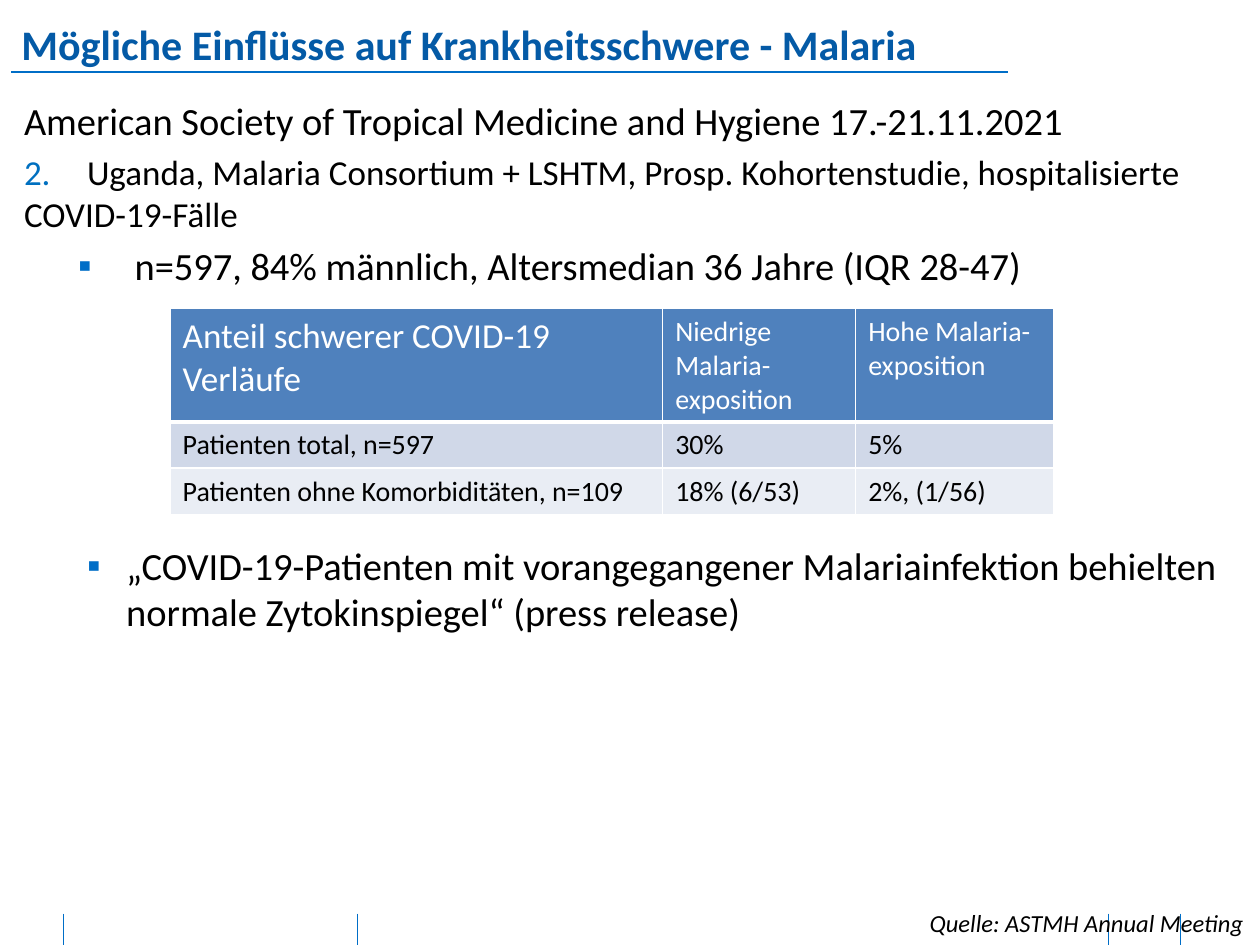
"""Build the slide on malaria exposition and COVID-19 severity."""
from dataclasses import dataclass

from lxml import etree
from pptx import Presentation, util as u
from pptx.dml.color import RGBColor
from pptx.enum import shapes, text
from pptx.oxml.ns import qn


@dataclass(frozen=True)
class Theme:
    font: str = "Calibri"
    title: str = "045AA6"
    rule: str = "006EC7"
    number: str = "0070C0"
    ink: str = "000000"
    white: str = "FFFFFF"
    head: str = "4F81BD"
    bands: tuple = ("D0D8E8", "E9EDF4")
    title_pt: int = 24
    body_pt: int = 22
    item_pt: int = 20
    cell_pt: int = 16
    source_pt: int = 14
    gap_pt: float = 4.3


T = Theme()
TITLE = "Mögliche Einflüsse auf Krankheitsschwere - Malaria"
EVENT = "American Society of Tropical Medicine and Hygiene 17.-21.11.2021"
STUDY = ("2.", "\tUganda, Malaria Consortium + LSHTM, Prosp. Kohortenstudie, "
               "hospitalisierte COVID-19-Fälle")
BULLETS = [
    ("n=597, 84% männlich, Altersmedian 36 Jahre (IQR 28-47)", 2.23, -1.14, T.gap_pt),
    ("„COVID-19-Patienten mit vorangegangener Malariainfektion behielten "
     "normale Zytokinspiegel“ (press release)", 2.06, -0.79, 145),
]
TABLE = [
    ("Anteil schwerer COVID-19 Verläufe", "Niedrige Malaria-exposition",
     "Hohe Malaria-exposition"),
    ("Patienten total, n=597", "30%", "5%"),
    ("Patienten ohne Komorbiditäten, n=109", "18% (6/53)", "2%, (1/56)"),
]
COL_WIDTHS = (9.93, 3.89, 3.99)
ROW_HEIGHTS = (2.26, 0.93, 0.93)
SOURCE = "Quelle: ASTMH Annual Meeting"
FOOTER_TICKS = (1.27, 7.21, 22.35, 23.8)


def rgb(value):
    return RGBColor.from_string(value)


def style(p, size, color=T.ink, bold=False, italic=False):
    for r in p.runs:
        f = r.font
        f.name, f.size, f.bold, f.italic = T.font, u.Pt(size), bold, italic
        f.color.rgb = rgb(color)


def place(sp, *box):
    sp.left, sp.top, sp.width, sp.height = map(u.Cm, box)


def add_line(s, x1, y1, x2, y2, width):
    cx = s.shapes.add_connector(shapes.MSO_CONNECTOR.STRAIGHT, *map(u.Cm, (x1, y1, x2, y2)))
    cx.line.color.rgb, cx.line.width = rgb(T.rule), u.Pt(width)
    etree.SubElement(cx.element.spPr, qn("a:effectLst"))


def sub(parent, tag, **attrs):
    return etree.SubElement(parent, qn(tag), attrs)


def set_list(p, left=0, indent=0, char=None, tab=None):
    pr = p._p.get_or_add_pPr()
    pr.set("marL", str(u.Cm(left)))
    pr.set("indent", str(u.Cm(indent)))
    if char:
        sub(sub(pr, "a:buClr"), "a:srgbClr", val=T.rule)
        sub(pr, "a:buFont", typeface="Arial")
        sub(pr, "a:buChar", char=char)
    else:
        sub(pr, "a:buNone")
    if tab:
        sub(sub(pr, "a:tabLst"), "a:tab", pos=str(u.Cm(tab)), algn="l")


def add_title(s):
    sp = s.shapes.title
    place(sp, 0.43, 0.38, 22.48, 1.02)
    tf = sp.text_frame
    tf.text = TITLE
    tf.margin_left = tf.margin_right = tf.margin_top = tf.margin_bottom = 0
    p = tf.paragraphs[0]
    p.alignment = text.PP_ALIGN.LEFT
    style(p, T.title_pt, T.title, bold=True)


def add_body(s):
    sp = s.placeholders[1]
    place(sp, 0.23, 1.83, 25.48, 17.22)
    tf = sp.text_frame
    tf.auto_size = text.MSO_AUTO_SIZE.NONE
    p = tf.paragraphs[0]
    p.text = EVENT
    p.space_before = u.Pt(0)
    set_list(p)
    style(p, T.body_pt)

    p = tf.add_paragraph()
    p.space_before = u.Pt(T.gap_pt)
    set_list(p, tab=1.27)
    for part in STUDY:
        p.add_run().text = part
    style(p, T.item_pt)
    p.runs[0].font.color.rgb = rgb(T.number)

    for words, left, indent, before in BULLETS:
        p = tf.add_paragraph()
        p.text, p.level = words, 1
        p.space_before = u.Pt(before)
        set_list(p, left, indent, "▪")
        style(p, T.body_pt)


def set_borders(cell, bottom):
    pr = cell._tc.get_or_add_tcPr()
    for side, width in (("L", 1), ("R", 1), ("T", 1), ("B", bottom)):
        ln = sub(pr, f"a:ln{side}", w=str(u.Pt(width)))
        sub(sub(ln, "a:solidFill"), "a:srgbClr", val=T.white)


def add_table(s):
    box = map(u.Cm, (3.43, 6.22, sum(COL_WIDTHS), sum(ROW_HEIGHTS)))
    tbl = s.shapes.add_table(len(TABLE), len(COL_WIDTHS), *box).table
    for col, width in zip(tbl.columns, COL_WIDTHS):
        col.width = u.Cm(width)
    for i, (row, height) in enumerate(zip(TABLE, ROW_HEIGHTS)):
        tbl.rows[i].height = u.Cm(height)
        for j, words in enumerate(row):
            cell = tbl.cell(i, j)
            cell.text = words
            set_borders(cell, 1 if i else 3)
            cell.fill.solid()
            cell.fill.fore_color.rgb = rgb(T.bands[(i - 1) % 2] if i else T.head)
            style(cell.text_frame.paragraphs[0],
                  T.cell_pt if i or j else T.item_pt, T.ink if i else T.white)


def add_source(s):
    tf = s.shapes.add_textbox(*map(u.Cm, (17.93, 18.19, 7.39, 0.86))).text_frame
    tf.word_wrap = True
    tf.text = SOURCE
    p = tf.paragraphs[0]
    p.alignment = text.PP_ALIGN.RIGHT
    style(p, T.source_pt, italic=True)


def main():
    prs = Presentation()
    prs.slide_width, prs.slide_height = u.Cm(25.4), u.Cm(19.05)
    s = prs.slides.add_slide(prs.slide_layouts[1])
    for x in FOOTER_TICKS:
        add_line(s, x, 18.42, x, 19.05, 0.5)
    add_title(s)
    add_line(s, 0.23, 1.45, 20.32, 1.45, 1.5)
    add_source(s)
    add_body(s)
    add_table(s)
    prs.save("out.pptx")


if __name__ == "__main__":
    main()
